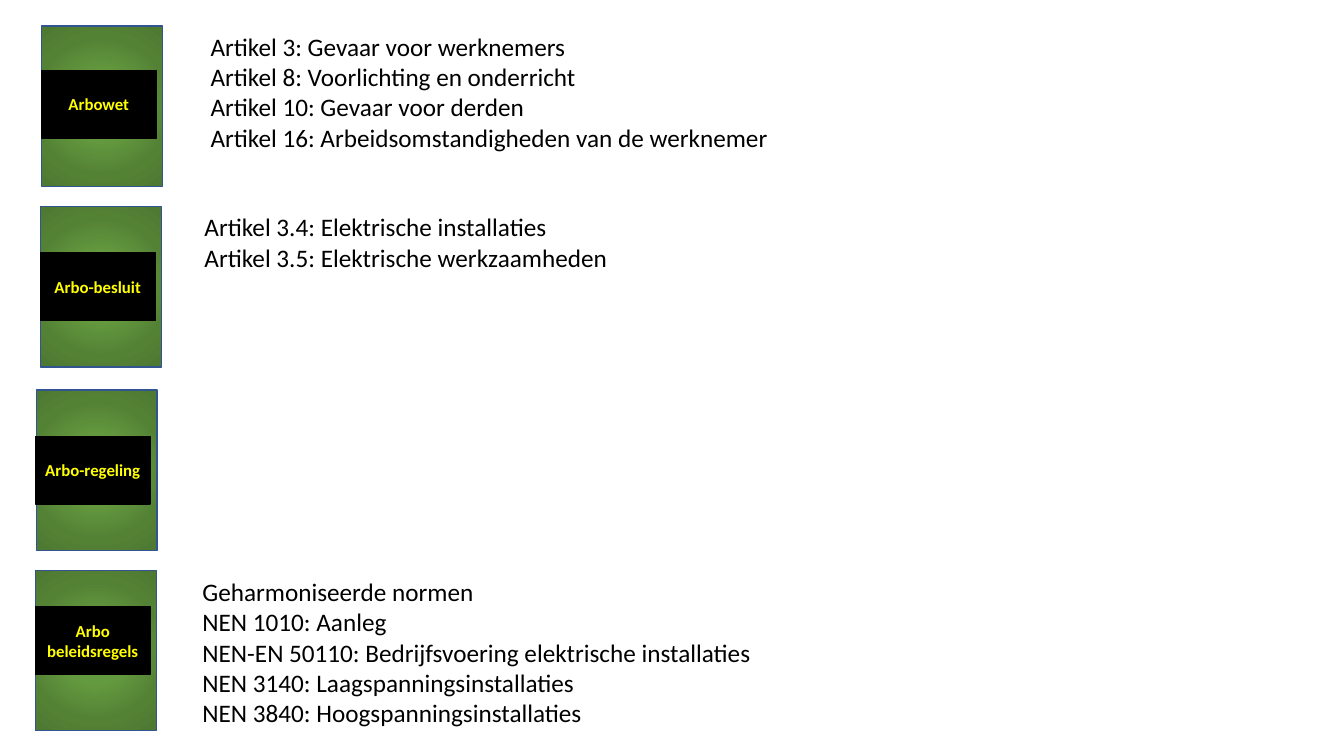
from pptx import Presentation
from pptx.dml.color import RGBColor
from pptx.enum.shapes import MSO_SHAPE
from pptx.enum.text import MSO_ANCHOR, MSO_AUTO_SIZE, PP_ALIGN
from pptx.oxml import parse_xml
from pptx.oxml.ns import nsdecls, qn
from pptx.util import Inches, Pt

RECTANGLE = MSO_SHAPE.RECTANGLE
MIDDLE = MSO_ANCHOR.MIDDLE
GROW = MSO_AUTO_SIZE.SHAPE_TO_FIT_TEXT
LEFT, CENTER = PP_ALIGN.LEFT, PP_ALIGN.CENTER

FONT = "Calibri"
BLACK, YELLOW, BORDER = "000000", "FFFF00", "325491"
COVER_STOPS = [(0, "649A3F"), (32, "649A3F"), (69, "548235"), (97, "4E7932")]
COVER_SIZE = (1.2, 1.59)
LABEL_SIZE = (1.14, 0.67)

# Each book: cover position, label position, label lines
BOOKS = [
    ((0.41, 0.26), (0.41, 0.7), ["Arbowet"]),
    ((0.4, 2.05), (0.4, 2.51), ["Arbo-besluit"]),
    ((0.36, 3.87), (0.35, 4.33), ["Arbo-regeling"]),
    ((0.35, 5.66), (0.35, 6.02), ["Arbo", "beleidsregels"]),
]

# Each list: left, top, width, height, wrap, lines
ARTICLE_LISTS = [
    ((1.99, 0.26, 11.06, 1.31), True, [
        "Artikel 3: Gevaar voor werknemers",
        "Artikel 8: Voorlichting en onderricht",
        "Artikel 10: Gevaar voor derden",
        "Artikel 16: Arbeidsomstandigheden van de werknemer",
    ]),
    ((1.93, 2.05, 4.24, 0.71), False, [
        "Artikel 3.4: Elektrische installaties",
        "Artikel 3.5: Elektrische werkzaamheden",
    ]),
    ((1.91, 5.67, 5.7, 1.62), False, [
        "Geharmoniseerde normen",
        "NEN 1010: Aanleg",
        "NEN-EN 50110: Bedrijfsvoering elektrische installaties",
        "NEN 3140: Laagspanningsinstallaties",
        "NEN 3840: Hoogspanningsinstallaties",
    ]),
]


def rgb(value):
    return RGBColor.from_string(value)


def write_lines(frame, lines, size, color, bold, align):
    frame.text = "\n".join(lines)
    for para in frame.paragraphs:
        para.alignment = align
        for span in para.runs:
            span.font.name = FONT
            span.font.size = Pt(size)
            span.font.bold = bold
            span.font.color.rgb = rgb(color)


def add_box(page, position, size, border):
    box = page.shapes.add_shape(RECTANGLE, *map(Inches, position + size))
    box.shadow.inherit = False
    box.line.color.rgb = rgb(border)
    box.line.width = Pt(1)
    return box


def fill_radial(box, stops):
    """Fill the box with a gradient that runs outward from its centre."""
    box.fill.gradient()
    gradient = box.element.spPr.find(qn("a:gradFill"))
    stop_xml = "".join(
        f'<a:gs pos="{percent * 1000}"><a:srgbClr val="{color}"/></a:gs>'
        for percent, color in stops
    )
    radial = parse_xml(
        f'<a:gradFill {nsdecls("a")} rotWithShape="1"><a:gsLst>{stop_xml}</a:gsLst>'
        '<a:path path="circle">'
        '<a:fillToRect l="50000" t="50000" r="50000" b="50000"/>'
        '</a:path></a:gradFill>'
    )
    gradient.getparent().replace(gradient, radial)


def add_cover(page, position):
    fill_radial(add_box(page, position, COVER_SIZE, BORDER), COVER_STOPS)


def add_label(page, position, lines):
    label = add_box(page, position, LABEL_SIZE, BLACK)
    label.fill.solid()
    label.fill.fore_color.rgb = rgb(BLACK)
    frame = label.text_frame
    frame.word_wrap = True
    frame.vertical_anchor = MIDDLE
    frame.margin_left = frame.margin_right = Inches(0.04)
    frame.margin_top = frame.margin_bottom = Inches(0.05)
    write_lines(frame, lines, 12, YELLOW, True, CENTER)


def add_article_list(page, area, wrap, lines):
    frame = page.shapes.add_textbox(*map(Inches, area)).text_frame
    frame.word_wrap = wrap
    frame.auto_size = GROW
    write_lines(frame, lines, 18, BLACK, False, LEFT)


def main():
    deck = Presentation()
    deck.slide_width, deck.slide_height = Inches(13.33), Inches(7.5)
    page = deck.slides.add_slide(deck.slide_layouts.get_by_name("Blank"))
    for cover_position, _, _ in BOOKS:
        add_cover(page, cover_position)
    for _, label_position, lines in BOOKS:
        add_label(page, label_position, lines)
    for area, wrap, lines in ARTICLE_LISTS:
        add_article_list(page, area, wrap, lines)
    deck.save("out.pptx")


if __name__ == "__main__":
    main()
